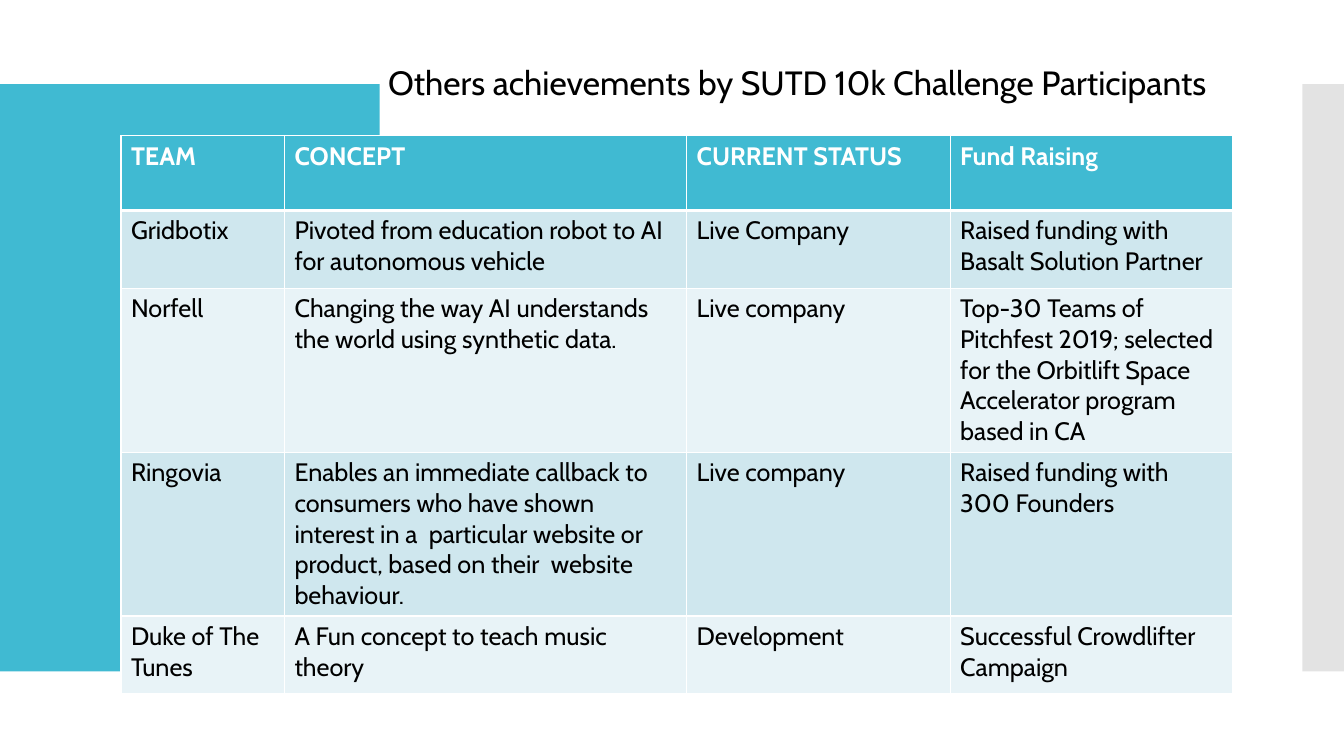
from dataclasses import dataclass

from lxml import etree
from pptx import Presentation
from pptx.dml.color import RGBColor
from pptx.enum.shapes import MSO_SHAPE
from pptx.enum.text import MSO_ANCHOR, PP_ALIGN
from pptx.oxml.ns import qn
from pptx.util import Pt

RECTANGLE = MSO_SHAPE.RECTANGLE
TOP = MSO_ANCHOR.TOP
LEFT = PP_ALIGN.LEFT
TITLE_ONLY = 5


@dataclass(frozen=True)
class Theme:
    font: str = "Cabin"
    title_size: float = 24
    table_size: float = 18
    accent: str = "40BAD2"
    side: str = "C8C8C8"
    band_dark: str = "CFE7EE"
    band_light: str = "E8F3F7"
    text: str = "000000"
    white: str = "FFFFFF"
    rule: float = 1
    header_rule: float = 3


class SlideBuilder:
    def __init__(self, deck, theme):
        self.theme = theme
        self.slide = deck.slides.add_slide(deck.slide_layouts[TITLE_ONLY])

    def style(self, paragraph, size, color, bold=False):
        paragraph.alignment = LEFT
        for span in paragraph.runs:
            span.font.name = self.theme.font
            span.font.size = Pt(size)
            span.font.bold = bold
            span.font.color.rgb = RGBColor.from_string(color)

    def title(self, text, left, top, width, height):
        box = self.slide.shapes.title
        box.left, box.top, box.width, box.height = map(Pt, (left, top, width, height))
        frame = box.text_frame
        frame.text = text
        frame.word_wrap = True
        frame.vertical_anchor = TOP
        self.style(frame.paragraphs[0], self.theme.title_size, self.theme.text)

    def block(self, left, top, width, height, color, opacity=100):
        shape = self.slide.shapes.add_shape(RECTANGLE, *map(Pt, (left, top, width, height)))
        shape.shadow.inherit = False
        shape.line.fill.background()
        shape.fill.solid()
        shape.fill.fore_color.rgb = RGBColor.from_string(color)
        if opacity < 100:
            tint = shape.fill._xPr.find(".//" + qn("a:srgbClr"))
            etree.SubElement(tint, qn("a:alpha"), val=str(opacity * 1000))

    def border(self, cell, side, width):
        properties = cell._tc.get_or_add_tcPr()
        line = etree.SubElement(properties, qn("a:ln" + side), w=str(Pt(width)))
        fill = etree.SubElement(line, qn("a:solidFill"))
        etree.SubElement(fill, qn("a:srgbClr"), val=self.theme.white)

    def cell(self, cell, text, row):
        theme = self.theme
        header = row == 0
        top = theme.header_rule if row == 1 else theme.rule
        bottom = theme.header_rule if header else theme.rule
        for side, width in zip("LRTB", (theme.rule, theme.rule, top, bottom)):
            self.border(cell, side, width)
        band = theme.band_dark if row % 2 else theme.band_light
        cell.fill.solid()
        cell.fill.fore_color.rgb = RGBColor.from_string(theme.accent if header else band)
        cell.text_frame.text = text
        color = theme.white if header else theme.text
        self.style(cell.text_frame.paragraphs[0], theme.table_size, color, header)

    def table(self, rows, left, top, widths, header_height, row_height):
        heights = [header_height] + [row_height] * (len(rows) - 1)
        table = self.slide.shapes.add_table(
            len(rows), len(widths), Pt(left), Pt(top), Pt(sum(widths)), Pt(sum(heights))
        ).table
        for column, width in zip(table.columns, widths):
            column.width = Pt(width)
        for index, (row, height, texts) in enumerate(zip(table.rows, heights, rows)):
            row.height = Pt(height)
            for cell, text in zip(row.cells, texts):
                self.cell(cell, text, index)


TEAMS = [
    ("TEAM", "CONCEPT", "CURRENT STATUS", "Fund Raising"),
    ("Gridbotix", "Pivoted from education robot to AI for autonomous vehicle",
     "Live Company", "Raised funding with Basalt Solution Partner"),
    ("Norfell", "Changing the way AI understands the world using synthetic data.",
     "Live company",
     "Top-30 Teams of Pitchfest 2019; selected for the Orbitlift Space "
     "Accelerator program based in CA"),
    ("Ringovia",
     "Enables an immediate callback to consumers who have shown interest in a  "
     "particular website or product, based on their  website behaviour.",
     "Live company", "Raised funding with 300 Founders"),
    ("Duke of The Tunes", "A Fun concept to teach music theory",
     "Development", "Successful Crowdlifter Campaign"),
]


def main():
    deck = Presentation()
    deck.slide_width, deck.slide_height = Pt(960), Pt(540)
    theme = Theme()
    page = SlideBuilder(deck, theme)
    page.block(0, 60, 271.2, 419.5, theme.accent)
    page.block(930.4, 60, 29.6, 419.5, theme.side, opacity=50)
    page.table(TEAMS, left=86.4, top=97, widths=(116.8, 287.3, 188.2, 202),
               header_height=53.3, row_height=55.6)
    page.title("Others achievements by SUTD 10k Challenge Participants", 270, 40.3, 670.3, 36)
    deck.save("out.pptx")


if __name__ == "__main__":
    main()
